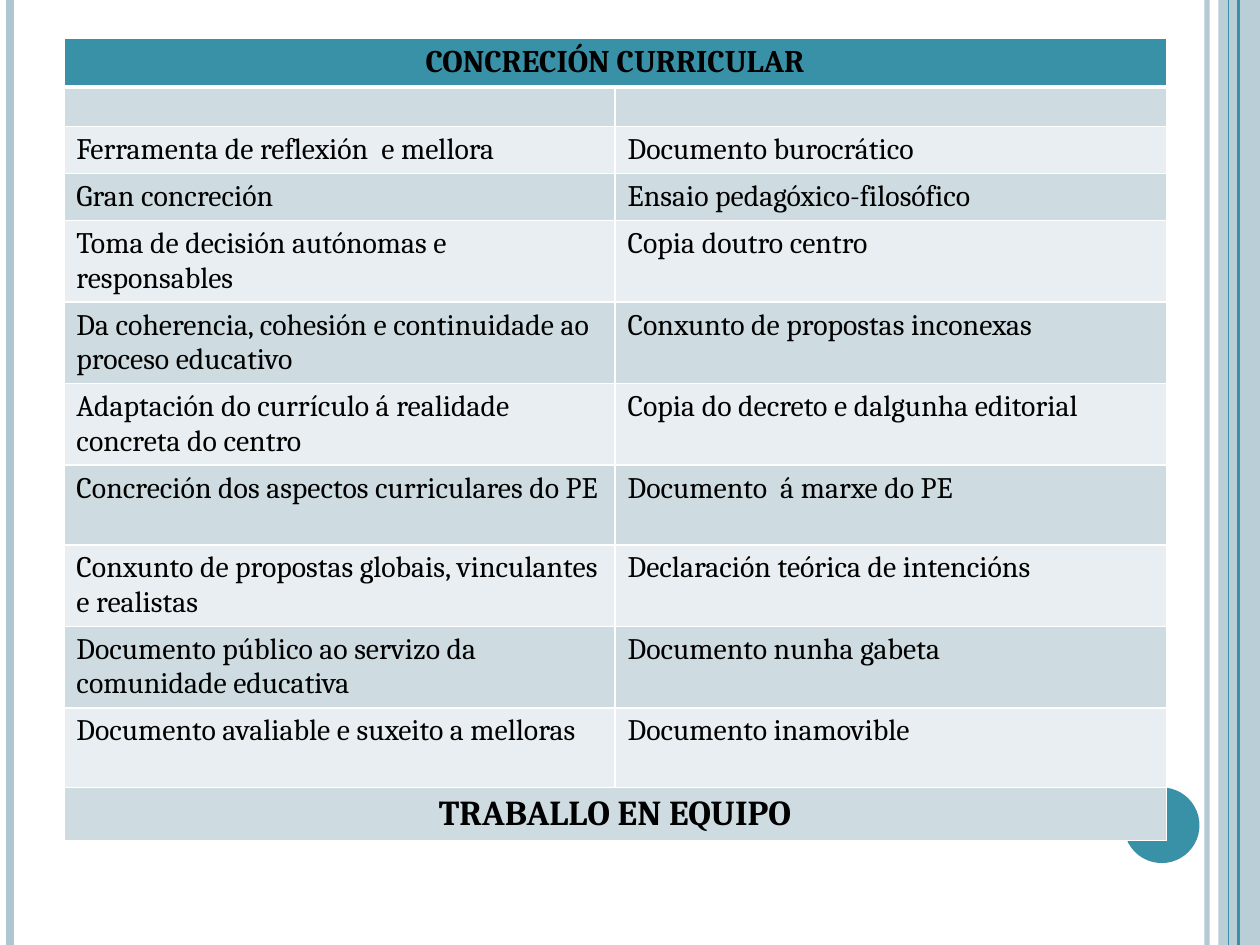
from lxml.etree import SubElement
from pptx import Presentation
from pptx.dml.color import RGBColor
from pptx.enum.shapes import MSO_CONNECTOR, MSO_SHAPE
from pptx.enum.text import PP_ALIGN
from pptx.oxml import parse_xml
from pptx.oxml.ns import nsdecls, qn
from pptx.util import Pt

COLORS = {"teal": "3891A7", "pale": "AFC7D0", "band": "CEDCE1",
          "light": "E8EEF1", "white": "FFFFFF", "text": "000000"}
WIDTH, HEIGHT = 720, 540


def rgb(name):
    return RGBColor.from_string(COLORS[name])


def write(cell, text, size=17, bold=False, align=PP_ALIGN.LEFT):
    paragraph = cell.text_frame.paragraphs[0]
    paragraph.alignment = align
    if not text:
        # An empty cell takes its line height from the end mark
        SubElement(paragraph._p, qn("a:endParaRPr"), sz=str(size * 100))
        return
    run = paragraph.add_run()
    run.text = text
    run.font.name = "Cambria"
    run.font.size = Pt(size)
    run.font.bold = bold
    run.font.color.rgb = rgb("text")


prs = Presentation()
prs.slide_width, prs.slide_height = Pt(WIDTH), Pt(HEIGHT)
slide = prs.slides.add_slide(prs.slide_layouts[6])
shapes = slide.shapes

# Side stripes and page disc, from back to front
side_stripes = [(689.76, "pale", 3, 93), (5.76, "pale", 4.5, 100),
                (707.76, "teal", 1.5, 100), (702, "teal", 0.75, 100)]
side_blocks = [(MSO_SHAPE.RECTANGLE, (696.24, 0, 23.76, HEIGHT), "pale", 87),
               (MSO_SHAPE.OVAL, (642.24, 450, 43.2, 43.2), "teal", 100)]

for preset, box, color, opacity in side_blocks:
    block = shapes.add_shape(preset, *map(Pt, box))
    block.shadow.inherit = False
    block.fill.solid()
    block.fill.fore_color.rgb = rgb(color)
    block.line.fill.background()
    if opacity < 100:
        fill_color = block._element.spPr.find(".//" + qn("a:srgbClr"))
        SubElement(fill_color, qn("a:alpha"), val=str(opacity * 1000))

for x, color, weight, opacity in side_stripes:
    stripe = shapes.add_connector(MSO_CONNECTOR.STRAIGHT, Pt(x), Pt(0), Pt(x), Pt(HEIGHT))
    stripe.line.color.rgb = rgb(color)
    stripe.line.width = Pt(weight)
    if opacity < 100:
        line_color = stripe._element.spPr.find(".//" + qn("a:srgbClr"))
        SubElement(line_color, qn("a:alpha"), val=str(opacity * 1000))
    SubElement(stripe._element.spPr, qn("a:effectLst"))

# Comparison table
comparison = [
    ("CONCRECIÓN CURRICULAR", ""),
    ("", ""),
    ("Ferramenta de reflexión  e mellora", "Documento burocrático"),
    ("Gran concreción", "Ensaio pedagóxico-filosófico"),
    ("Toma de decisión autónomas e responsables", "Copia doutro centro"),
    ("Da coherencia, cohesión e continuidade ao proceso educativo",
     "Conxunto de propostas inconexas"),
    ("Adaptación do currículo á realidade concreta do centro",
     "Copia do decreto e dalgunha editorial"),
    ("Concreción dos aspectos curriculares do PE", "Documento  á marxe do PE"),
    ("Conxunto de propostas globais, vinculantes e realistas",
     "Declaración teórica de intencións"),
    ("Documento público ao servizo da comunidade educativa", "Documento nunha gabeta"),
    ("Documento avaliable e suxeito a melloras", "Documento inamovible"),
    ("TRABALLO EN EQUIPO", ""),
]
row_heights = [27.2, 22.4, 26.8, 26.8] + [45.6] * 7 + [29.6]
last = len(comparison) - 1
headings = {0: 18, last: 20}

table = shapes.add_table(len(comparison), 2, Pt(36.5), Pt(21.8),
                         Pt(630), Pt(sum(row_heights))).table
table.first_row = table.horz_banding = False
for column in table.columns:
    column.width = Pt(315)

for r, (entries, height) in enumerate(zip(comparison, row_heights)):
    table.rows[r].height = Pt(height)
    if r in headings:
        table.cell(r, 0).merge(table.cell(r, 1))
    for c, entry in enumerate(entries):
        cell = table.cell(r, c)
        cell.fill.solid()
        cell.fill.fore_color.rgb = rgb("teal" if r == 0 else "band" if r % 2 else "light")
        # White grid, heavier under the heading
        weights = {"L": 1, "R": 1, "T": 3 if r == 1 else 1, "B": 3 if r == 0 else 1}
        for i, (side, weight) in enumerate(weights.items()):
            border = parse_xml(
                f'<a:ln{side} {nsdecls("a")} w="{Pt(weight)}"><a:solidFill>'
                f'<a:srgbClr val="{COLORS["white"]}"/></a:solidFill></a:ln{side}>')
            cell._tc.get_or_add_tcPr().insert(i, border)
        if r in headings and c == 0:
            write(cell, entry, size=headings[r], bold=True, align=PP_ALIGN.CENTER)
        else:
            write(cell, entry, size=17 if entry else 12)

prs.save("out.pptx")
